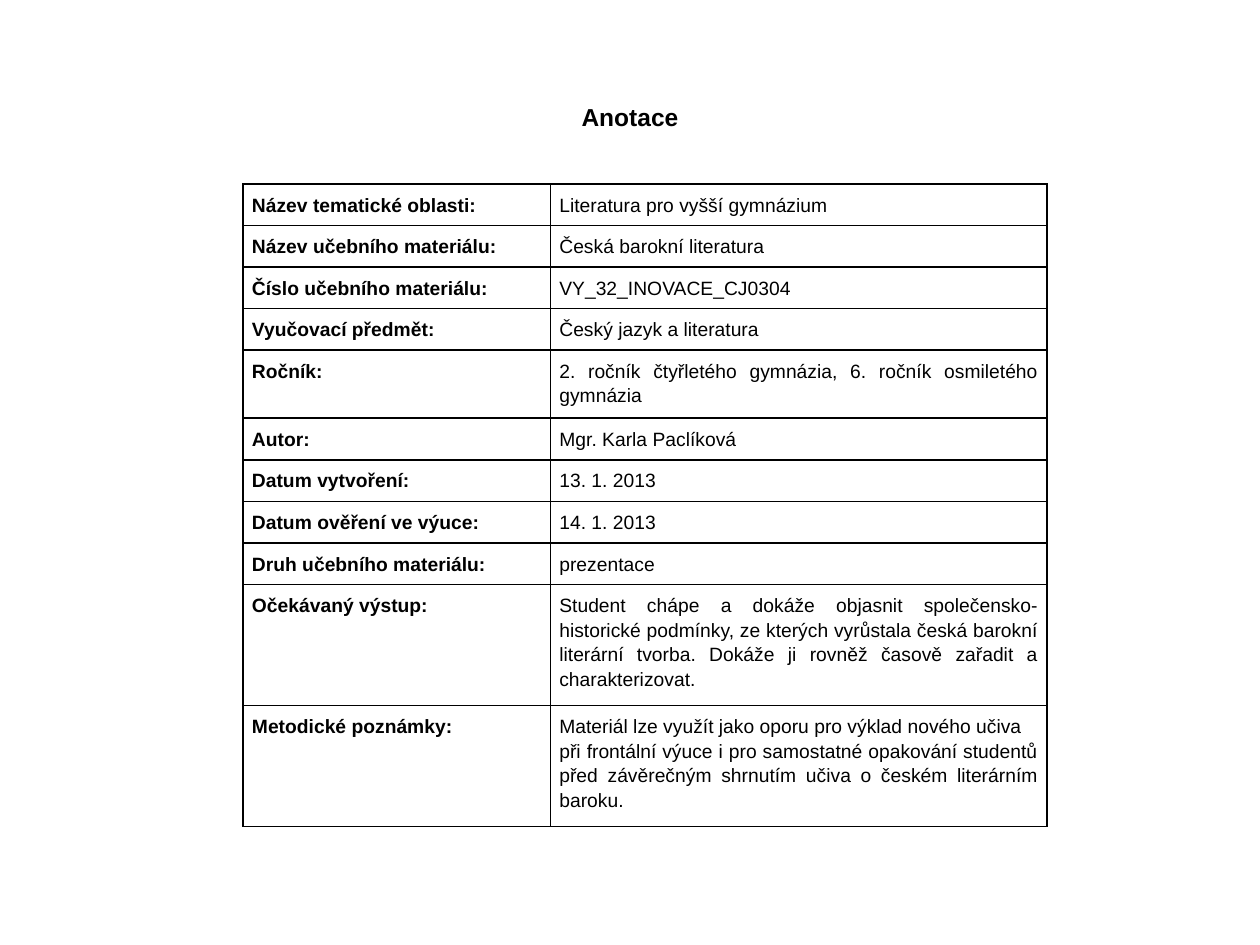
from lxml.etree import SubElement
from pptx import Presentation
from pptx.dml.color import RGBColor
from pptx.enum.text import MSO_ANCHOR, PP_ALIGN
from pptx.oxml.ns import qn
from pptx.util import Inches, Pt

BLACK = RGBColor(0, 0, 0)
WHITE = RGBColor(255, 255, 255)
COLS = (2.44, 3.94)
LINE, PAD = 0.21, 0.12  # height of a text line, and of both cell margins

# label, value, number of text lines
ROWS = [
    ("Název tematické oblasti:", "Literatura pro vyšší gymnázium", 1),
    ("Název učebního materiálu:", "Česká barokní literatura", 1),
    ("Číslo učebního materiálu:", "VY_32_INOVACE_CJ0304", 1),
    ("Vyučovací předmět:", "Český jazyk a literatura", 1),
    ("Ročník:", "2. ročník čtyřletého gymnázia, 6. ročník osmiletého gymnázia", 2),
    ("Autor:", "Mgr. Karla Paclíková", 1),
    ("Datum vytvoření:", "13. 1. 2013", 1),
    ("Datum ověření ve výuce:", "14. 1. 2013", 1),
    ("Druh učebního materiálu:", "prezentace", 1),
    ("Očekávaný výstup:",
     "Student chápe a dokáže objasnit společensko-historické podmínky, "
     "ze kterých vyrůstala česká barokní literární tvorba. "
     "Dokáže ji rovněž časově zařadit a charakterizovat.", 4),
    ("Metodické poznámky:",
     "Materiál lze využít jako oporu pro výklad nového učiva\n"
     "při frontální výuce i pro samostatné opakování studentů "
     "před závěrečným shrnutím učiva o českém literárním baroku.", 4),
]


def style(frame, size, bold, **form):
    """Format every paragraph of a text frame."""
    for para in frame.paragraphs:
        for key, val in form.items():
            setattr(para, key, val)
        for run in para.runs:
            font = {"name": "Arial", "size": Pt(size), "bold": bold}
            for key, val in font.items():
                setattr(run.font, key, val)
            run.font.color.rgb = BLACK


def border(cell):
    props = cell._tc.get_or_add_tcPr()
    for side in ("lnL", "lnR", "lnT", "lnB"):
        line = SubElement(props, qn(f"a:{side}"), w=str(Pt(1)))
        fill = SubElement(line, qn("a:solidFill"))
        SubElement(fill, qn("a:srgbClr"), val=str(BLACK))


prs = Presentation()
prs.slide_width, prs.slide_height = Inches(10), Inches(7.5)
slide = prs.slides.add_slide(prs.slide_layouts[5])
slide.background.fill.solid()
slide.background.fill.fore_color.rgb = WHITE

title = slide.shapes.title
place = {"left": 0, "top": Inches(0.68),
         "width": prs.slide_width, "height": Inches(0.5)}
for key, val in place.items():
    setattr(title, key, val)
title.text = "Anotace"
title.text_frame.vertical_anchor = MSO_ANCHOR.MIDDLE
style(title.text_frame, 14, True, alignment=PP_ALIGN.CENTER)

high = [PAD + LINE * count for _, _, count in ROWS]
table = slide.shapes.add_table(
    len(ROWS), len(COLS), Inches(1.93), Inches(1.46),
    Inches(sum(COLS)), Inches(sum(high))).table
table.first_row = table.horz_banding = False
for col, width in zip(table.columns, COLS):
    col.width = Inches(width)

margins = {"margin_left": 0.07, "margin_right": 0.07,
           "margin_top": PAD / 2, "margin_bottom": PAD / 2}
for row, size, (label, value, _) in zip(table.rows, high, ROWS):
    row.height = Inches(size)
    for cell, text, bold in zip(row.cells, (label, value), (True, False)):
        cell.text = text
        for key, val in margins.items():
            setattr(cell, key, Inches(val))
        border(cell)
        cell.fill.background()
        align = PP_ALIGN.LEFT if bold else PP_ALIGN.JUSTIFY
        style(cell.text_frame, 11, bold, alignment=align, line_spacing=1.15)

prs.save("out.pptx")
